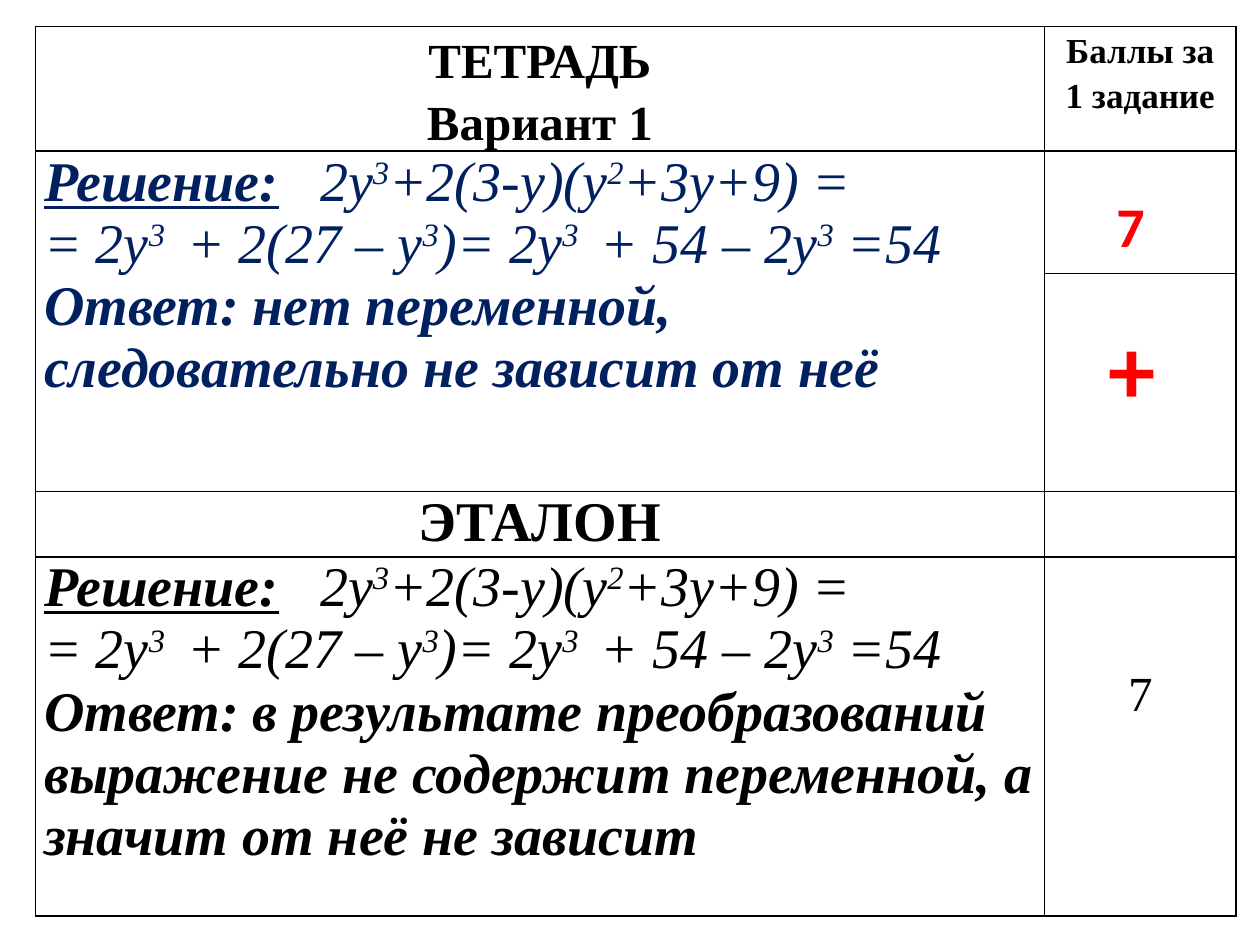
from lxml.etree import SubElement
from pptx import Presentation
from pptx.dml.color import RGBColor
from pptx.enum.text import MSO_AUTO_SIZE, PP_ALIGN as Align
from pptx.oxml import parse_xml
from pptx.oxml.ns import nsdecls, qn
from pptx.util import Inches, Pt

COLORS = {"ink": "000000", "pupil": "002060", "mark": "FF0000"}
COLUMNS = [8.01, 1.52]
ROWS = [0.99, 0.97, 1.73, 0.52, 2.85]
# Superscripts stand in braces.
FIRST_STEP = "\t2у{3}+2(3-у)(у{2}+3у+9) ="
SECOND_STEP = "= 2у{3 } + 2(27 – у{3})= 2у{3 } + 54 – 2у{3} =54"


class SlideBuilder:
    table_font = "Times New Roman"
    mark_font = "Calibri"

    def __init__(self, slide):
        self.slide = slide

    def style(self, font, size, color="ink", name=None, bold=True, italic=False):
        font.name = name or self.table_font
        font.size = Pt(size)
        font.bold = bold
        font.italic = italic
        font.color.rgb = RGBColor.from_string(COLORS[color])

    def grid(self, left, top, columns, rows):
        frame = self.slide.shapes.add_table(
            len(rows), len(columns), Inches(left), Inches(top),
            Inches(sum(columns)), Inches(sum(rows)))
        table = frame.table
        table.first_row = table.horz_banding = False
        for column, width in zip(table.columns, columns):
            column.width = Inches(width)
        for row, height in zip(table.rows, rows):
            row.height = Inches(height)
        for cell in table.iter_cells():
            cell.margin_left = cell.margin_right = Inches(0.07)
            cell.margin_top = cell.margin_bottom = 0
            cell.fill.background()
            self.border(cell)
        return table

    def border(self, cell):
        properties = cell._tc.get_or_add_tcPr()
        for index, side in enumerate("LRTB"):
            properties.insert(index, parse_xml(
                f'<a:ln{side} {nsdecls("a")} w="{Pt(1)}"><a:solidFill>'
                f'<a:srgbClr val="{COLORS["ink"]}"/></a:solidFill></a:ln{side}>'))

    def heading(self, cell, lines, size, spacing=None, bold=True):
        cell.text = "\n".join(lines)
        for paragraph in cell.text_frame.paragraphs:
            paragraph.alignment = Align.CENTER
            paragraph.line_spacing = spacing
            self.style(paragraph.font, size, bold=bold)
            for run in paragraph.runs:
                self.style(run.font, size, bold=bold)

    def formula(self, paragraph, markup, color):
        """Add runs, raising the parts that stand in braces."""
        for index, part in enumerate(markup.replace("}", "{").split("{")):
            run = paragraph.add_run()
            run.text = part
            self.style(run.font, 32, color, bold=False, italic=True)
            if index % 2:
                run._r.get_or_add_rPr().set("baseline", "30000")

    def solution(self, cell, answer, color):
        frame = cell.text_frame
        first = frame.paragraphs[0]
        tabs = SubElement(first._p.get_or_add_pPr(), qn("a:tabLst"))
        SubElement(tabs, qn("a:tab"), pos=str(Inches(2.19)), algn="l")
        label = first.add_run()
        label.text = "Решение:"
        self.style(label.font, 32, color, italic=True)
        label.font.underline = True
        self.formula(first, FIRST_STEP, color)
        self.formula(frame.add_paragraph(), SECOND_STEP, color)
        conclusion = frame.add_paragraph().add_run()
        conclusion.text = answer
        self.style(conclusion.font, 32, color, italic=True)

    def mark(self, text, left, top, width, height, size, indent=0.1):
        box = self.slide.shapes.add_textbox(
            Inches(left), Inches(top), Inches(width), Inches(height))
        frame = box.text_frame
        frame.word_wrap = True
        frame.auto_size = MSO_AUTO_SIZE.SHAPE_TO_FIT_TEXT
        frame.margin_left = Inches(indent)
        frame.text = text
        self.style(frame.paragraphs[0].font, size, "mark", self.mark_font)


def main():
    deck = Presentation()
    deck.slide_width, deck.slide_height = Inches(10), Inches(7.5)
    builder = SlideBuilder(deck.slides.add_slide(deck.slide_layouts[6]))

    table = builder.grid(0.28, 0.21, COLUMNS, ROWS)
    table.cell(1, 0).merge(table.cell(2, 0))
    builder.heading(table.cell(0, 0), ["ТЕТРАДЬ", "Вариант 1"], 28, 1.15)
    builder.heading(table.cell(0, 1), ["Баллы за 1 задание"], 20, 1.15)
    builder.solution(table.cell(1, 0),
                     "Ответ: нет переменной, следовательно не зависит от неё",
                     "pupil")
    builder.heading(table.cell(3, 0), ["ЭТАЛОН"], 32)
    builder.solution(table.cell(4, 0),
                     "Ответ: в результате преобразований выражение не содержит "
                     "переменной, а значит от неё не зависит", "ink")
    full_score = table.cell(4, 1)
    full_score.margin_top = Inches(0.88)
    builder.heading(full_score, ["7"], 28, bold=False)

    builder.mark("+", 8.7, 2.41, 0.71, 1.01, 54)
    builder.mark("7", 8.7, 1.47, 0.55, 0.64, 32, indent=0.16)
    deck.save("out.pptx")


if __name__ == "__main__":
    main()
